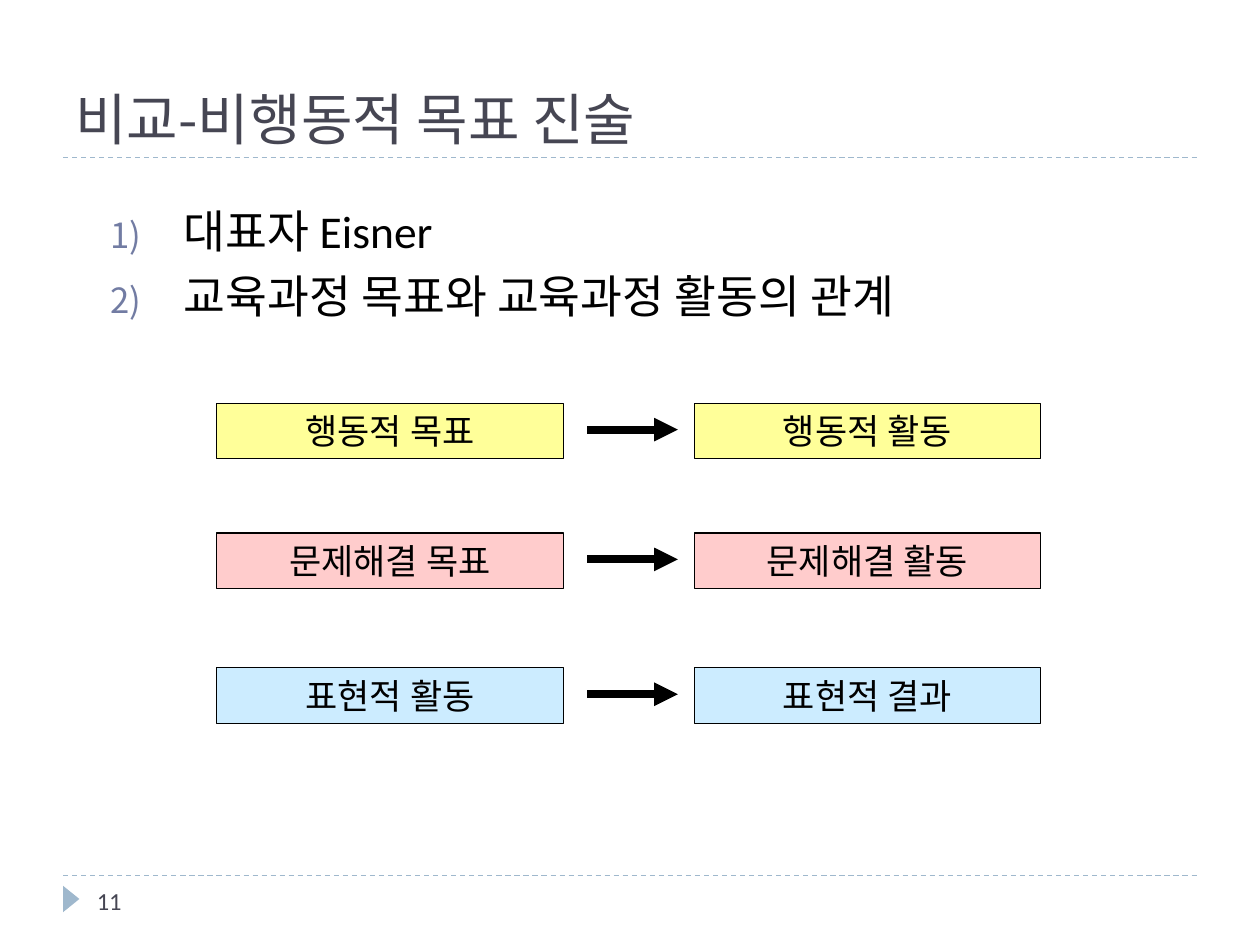
"""Build the slide that compares non-behavioural objective statements."""
from dataclasses import dataclass

from lxml.etree import SubElement
from pptx import Presentation
from pptx.dml.color import RGBColor
from pptx.enum.dml import MSO_LINE_DASH_STYLE as Dash
from pptx.enum.shapes import MSO_CONNECTOR as Connector, MSO_SHAPE as Shape
from pptx.enum.text import MSO_ANCHOR as Anchor, PP_ALIGN as Align
from pptx.oxml.ns import qn
from pptx.util import Inches, Pt


@dataclass(frozen=True)
class Theme:
    latin: str = "Calibri"
    korean: str = "Noto Sans CJK KR"
    heading: str = "464653"
    ink: str = "000000"
    accent: str = "9FB8CD"
    number: str = "727CA3"
    title_size: int = 32
    body_size: int = 26
    box_size: int = 20
    page_size: int = 14


@dataclass(frozen=True)
class Relation:
    source: str
    target: str
    top: float
    fill: str


THEME = Theme()
BOX_WIDTH, BOX_HEIGHT = 2.75, 0.44
SOURCE_LEFT, TARGET_LEFT = 1.72, 5.51
ARROW_START, ARROW_END, ARROW_DROP = 4.66, 5.38, 0.21
RULES = (6.95, 1.25)
POINTS = ("대표자 Eisner", "교육과정 목표와 교육과정 활동의 관계")
RELATIONS = (
    Relation("행동적 목표", "행동적 활동", 3.2, "FFFF99"),
    Relation("문제해결 목표", "문제해결 활동", 4.23, "FFCCCC"),
    Relation("표현적 활동", "표현적 결과", 5.3, "CCECFF"),
)


def rgb(value: str) -> RGBColor:
    return RGBColor.from_string(value)


def write(frame, *lines: str, size: int, color: str = THEME.ink,
          font: str = THEME.korean, align=Align.LEFT, anchor=Anchor.MIDDLE,
          before: float = 0, numbered: bool = False) -> None:
    frame.word_wrap = True
    frame.vertical_anchor = anchor
    for index, line in enumerate(lines):
        paragraph = frame.add_paragraph() if index else frame.paragraphs[0]
        paragraph.alignment = align
        paragraph.space_before = Pt(before)
        if numbered:
            number_paragraph(paragraph)
        run = paragraph.add_run()
        run.text = line
        run.font.size = Pt(size)
        run.font.color.rgb = rgb(color)
        run.font.name = font
        SubElement(run.font._element, qn("a:ea"), typeface=THEME.korean)


def number_paragraph(paragraph) -> None:
    properties = paragraph._p.get_or_add_pPr()
    properties.set("marL", str(Inches(0.58)))
    properties.set("indent", str(-Inches(0.58)))
    bullet_color = SubElement(properties, qn("a:buClr"))
    SubElement(bullet_color, qn("a:srgbClr"), val=THEME.number)
    SubElement(properties, qn("a:buSzPct"), val="76000")
    SubElement(properties, qn("a:buFont"), typeface=THEME.latin)
    SubElement(properties, qn("a:buAutoNum"), type="arabicParenR")


def add_text(slide, left: float, top: float, width: float, height: float,
             *lines: str, **style) -> None:
    box = slide.shapes.add_textbox(Inches(left), Inches(top), Inches(width), Inches(height))
    write(box.text_frame, *lines, **style)


def add_line(slide, start: float, end: float, y: float, color: str, weight: float):
    line = slide.shapes.add_connector(
        Connector.STRAIGHT, Inches(start), Inches(y), Inches(end), Inches(y))
    line.line.color.rgb = rgb(color)
    line.line.width = Pt(weight)
    SubElement(line._element.spPr, qn("a:effectLst"))
    return line


def add_shape(slide, kind, left: float, top: float, width: float, height: float, fill: str):
    shape = slide.shapes.add_shape(
        kind, Inches(left), Inches(top), Inches(width), Inches(height))
    shape.shadow.inherit = False
    shape.fill.solid()
    shape.fill.fore_color.rgb = rgb(fill)
    shape.line.fill.background()
    return shape


def add_box(slide, left: float, top: float, fill: str, label: str) -> None:
    box = add_shape(slide, Shape.RECTANGLE, left, top, BOX_WIDTH, BOX_HEIGHT, fill)
    box.line.color.rgb = rgb(THEME.ink)
    box.line.width = Pt(0.75)
    write(box.text_frame, label, size=THEME.box_size, align=Align.CENTER)


def add_relation(slide, relation: Relation) -> None:
    add_box(slide, SOURCE_LEFT, relation.top, relation.fill, relation.source)
    add_box(slide, TARGET_LEFT, relation.top, relation.fill, relation.target)
    arrow = add_line(slide, ARROW_START, ARROW_END, relation.top + ARROW_DROP, THEME.ink, 4.5)
    SubElement(arrow.line._get_or_add_ln(), qn("a:tailEnd"), type="triangle")


def main() -> None:
    deck = Presentation()
    deck.slide_width, deck.slide_height = Inches(10), Inches(7.5)
    slide = deck.slides.add_slide(deck.slide_layouts[6])
    for y in RULES:
        add_line(slide, 0.5, 9.5, y, THEME.accent, 0.75).line.dash_style = Dash.DASH
    marker = add_shape(slide, Shape.ISOSCELES_TRIANGLE, 0.46, 7.07, 0.21, 0.13, THEME.accent)
    marker.rotation = 90
    add_text(slide, 0.67, 6.95, 2.17, 0.4, "11", size=THEME.page_size,
             color=THEME.heading, font=THEME.latin)
    add_text(slide, 0.5, 0.17, 9, 1.08, "비교-비행동적 목표 진술", size=THEME.title_size,
             color=THEME.heading, anchor=Anchor.BOTTOM)
    add_text(slide, 0.78, 1.56, 8.41, 4.4, *POINTS, size=THEME.body_size,
             font=THEME.latin, anchor=Anchor.TOP, before=6, numbered=True)
    for relation in RELATIONS:
        add_relation(slide, relation)
    deck.save("out.pptx")


if __name__ == "__main__":
    main()
